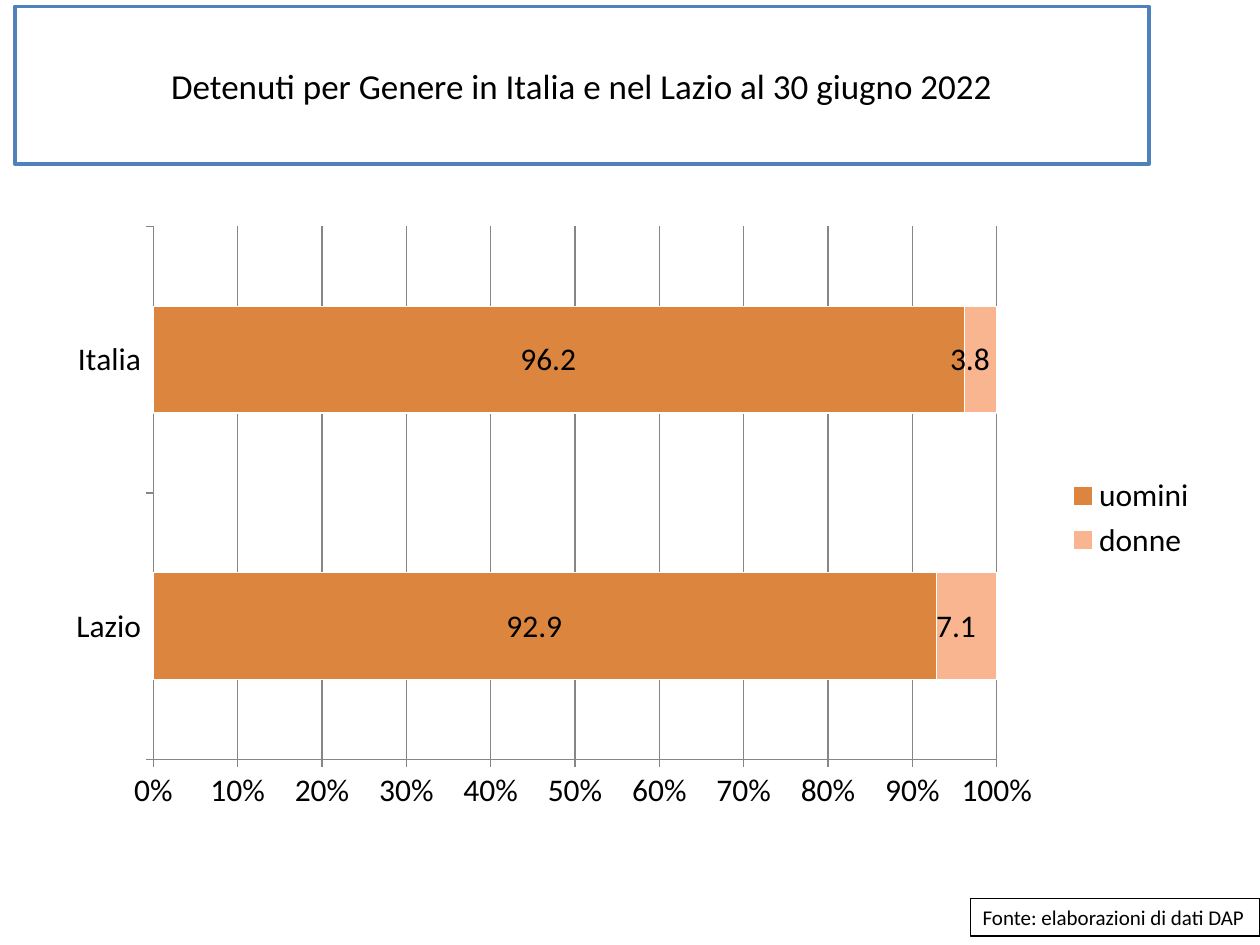
from dataclasses import dataclass

import pptx
import pptx.chart.data
import pptx.dml.color
import pptx.enum.chart
import pptx.enum.shapes
import pptx.enum.text
import pptx.oxml
import pptx.oxml.ns
import pptx.util
from pptx.util import Cm

FONT = "Calibri"
BLACK, WHITE, GREY = "000000", "FFFFFF", "868686"
LABEL_FORMAT = r"_-* #,##0.0\ _€_-"


@dataclass
class FramedText:
    text: str
    left: float
    top: float
    width: float
    height: float
    size: int
    border: str
    border_width: float
    alignment: pptx.enum.text.PP_ALIGN
    wrap: bool


@dataclass
class Gender:
    name: str
    shares: tuple[float, ...]
    color: str


REGIONS = ("Lazio", "Italia")
GENDERS = (
    Gender("uomini", (92.9, 96.2), "DC853E"),
    Gender("donne", (7.1, 3.8), "F9B590"),
)
FRAMES = (
    FramedText("Detenuti per Genere in Italia e nel Lazio al 30 giugno 2022",
               0.3, 0.13, 22.86, 3.18, 20, "4F81BD", 2,
               pptx.enum.text.PP_ALIGN.CENTER, True),
    FramedText("Fonte: elaborazioni di dati DAP",
               19.56, 18.11, 5.84, 0.76, 12, BLACK, 0.75,
               pptx.enum.text.PP_ALIGN.LEFT, False),
)


def rgb(color: str) -> pptx.dml.color.RGBColor:
    return pptx.dml.color.RGBColor.from_string(color)


def paint(target, fill: str, border: str, width: float) -> None:
    target.fill.solid()
    target.fill.fore_color.rgb = rgb(fill)
    target.line.color.rgb = rgb(border)
    target.line.width = pptx.util.Pt(width)


def style_font(font, size: int) -> None:
    font.name = FONT
    font.size = pptx.util.Pt(size)
    font.color.rgb = rgb(BLACK)


def add_framed_text(page, item: FramedText) -> None:
    box = page.shapes.add_shape(
        pptx.enum.shapes.MSO_SHAPE.RECTANGLE,
        Cm(item.left), Cm(item.top), Cm(item.width), Cm(item.height))
    box.shadow.inherit = False
    paint(box, WHITE, item.border, item.border_width)
    frame = box.text_frame
    frame.word_wrap = item.wrap
    frame.vertical_anchor = pptx.enum.text.MSO_ANCHOR.MIDDLE
    para = frame.paragraphs[0]
    para.alignment = item.alignment
    span = para.add_run()
    span.text = item.text
    style_font(span.font, item.size)


def set_plot_layout(chart, x: float, y: float, w: float, h: float) -> None:
    """Fix the inner plot area as fractions of the chart."""
    area = chart.element.find(".//" + pptx.oxml.ns.qn("c:plotArea"))
    for old in area.findall(pptx.oxml.ns.qn("c:layout")):
        area.remove(old)
    values = {"layoutTarget": "inner", "xMode": "edge", "yMode": "edge",
              "x": x, "y": y, "w": w, "h": h}
    children = "".join(f'<c:{tag} val="{value}"/>' for tag, value in values.items())
    area.insert(0, pptx.oxml.parse_xml(
        f'<c:layout {pptx.oxml.ns.nsdecls("c")}>'
        f"<c:manualLayout>{children}</c:manualLayout></c:layout>"))


def add_gender_chart(page) -> None:
    data = pptx.chart.data.CategoryChartData()
    data.categories = REGIONS
    for gender in GENDERS:
        data.add_series(gender.name, gender.shares)
    chart = page.shapes.add_chart(
        pptx.enum.chart.XL_CHART_TYPE.BAR_STACKED_100,
        Cm(1.09), Cm(4.32), Cm(23.29), Cm(12.24), data).chart
    style_font(chart.font, 18)
    chart.has_title = False
    chart.has_legend = True
    chart.legend.position = pptx.enum.chart.XL_LEGEND_POSITION.RIGHT
    chart.legend.include_in_layout = False
    set_plot_layout(chart, 0.086, 0.02, 0.73, 0.878)

    # Bars and their values
    plot = chart.plots[0]
    plot.gap_width, plot.overlap = 150, 100
    plot.vary_by_categories = False
    for series, gender in zip(plot.series, GENDERS):
        paint(series.format, gender.color, WHITE, 0.75)
        labels = series.data_labels
        labels.show_value = True
        labels.position = pptx.enum.chart.XL_LABEL_POSITION.CENTER
        labels.number_format = LABEL_FORMAT
        labels.number_format_is_linked = False
        style_font(labels.font, 18)

    # Axes
    value_axis = chart.value_axis
    value_axis.minimum_scale = 0
    value_axis.has_major_gridlines = True
    value_axis.tick_labels.number_format = "0%"
    value_axis.tick_labels.number_format_is_linked = False
    for axis in (chart.category_axis, value_axis):
        axis.major_tick_mark = pptx.enum.chart.XL_TICK_MARK.OUTSIDE
    for lines in (chart.category_axis, value_axis, value_axis.major_gridlines):
        lines.format.line.color.rgb = rgb(GREY)
        lines.format.line.width = pptx.util.Pt(0.75)


def main() -> None:
    deck = pptx.Presentation()
    deck.slide_width, deck.slide_height = Cm(25.4), Cm(19.05)
    page = deck.slides.add_slide(deck.slide_layouts[6])
    for item in FRAMES:
        add_framed_text(page, item)
    add_gender_chart(page)
    deck.save("out.pptx")


if __name__ == "__main__":
    main()
